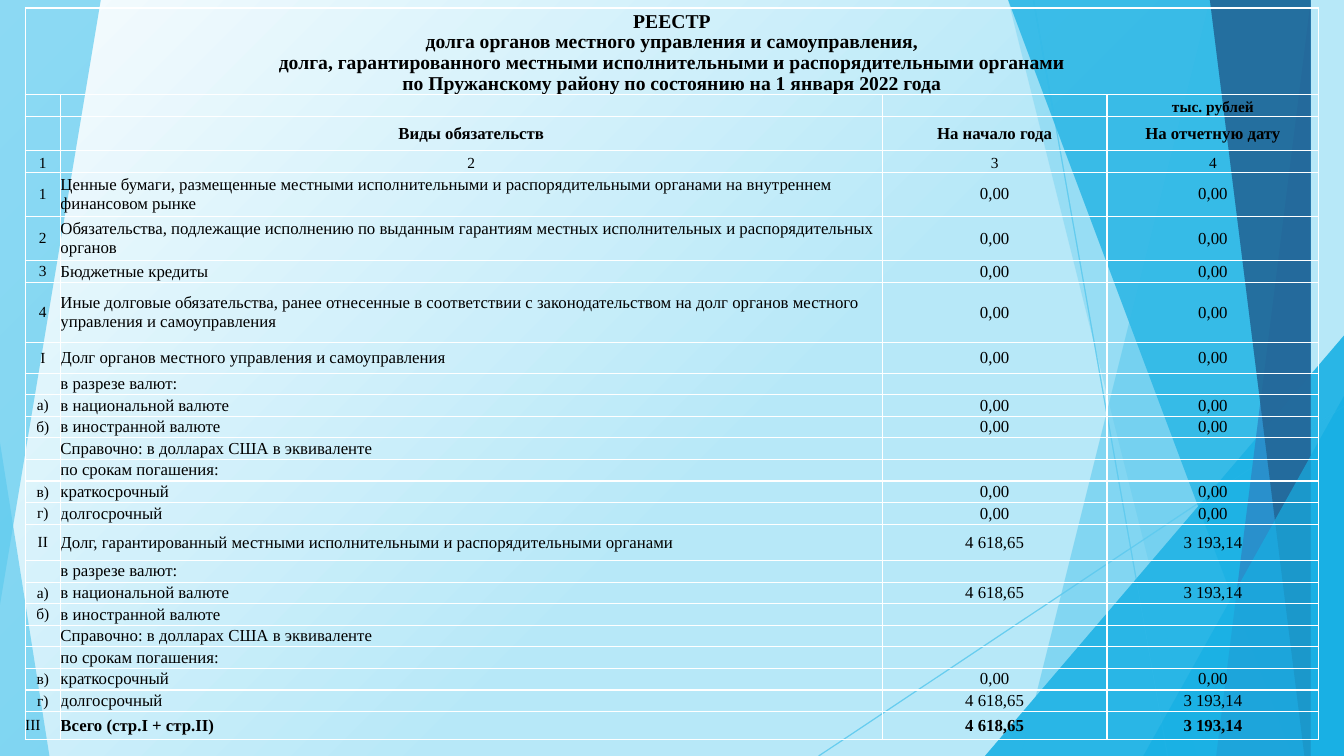
from lxml import etree
from pptx import Presentation, util as u
from pptx.dml.color import RGBColor
from pptx.enum import shapes, text
from pptx.oxml import ns

BLACK = RGBColor(0x00, 0x00, 0x00)
WHITE = RGBColor(0xFF, 0xFF, 0xFF)
MIST = RGBColor(0xF7, 0xFC, 0xFE)
PALE = RGBColor(0xB7, 0xE8, 0xF8)
SKY = RGBColor(0x5F, 0xCB, 0xEF)
AZURE = RGBColor(0x17, 0xB0, 0xE4)
BLUE = RGBColor(0x2E, 0x83, 0xC3)
NAVY = RGBColor(0x22, 0x62, 0x92)

WIDE, HIGH, TOP = 13.33, 7.5, -0.01
LEFT, MID = text.PP_ALIGN.LEFT, text.PP_ALIGN.CENTER
LOW, CENTRE = text.MSO_ANCHOR.BOTTOM, text.MSO_ANCHOR.MIDDLE
FACETS = [
    (12.28, 10.04, SKY, 36),
    (10.5, 11.83, SKY, 20),
    None,
    (10.21, 12.91, AZURE, 50),
    (13.03, 11.92, BLUE, 70),
    (11.96, 13.18, NAVY, 80),
]
TITLE = "\n".join([
    "РЕЕСТР",
    "долга органов местного управления и самоуправления,",
    "долга, гарантированного местными исполнительными и распорядительными органами",
    "по Пружанскому району по состоянию на 1 января 2022 года",
])
ZERO = ("0,00", "0,00")
DEBT = ("4 618,65", "3 193,14")
NONE = ("", "")


def detail(home, abroad, long):
    return [
        ("", "в разрезе валют:", *NONE),
        ("а)", "в национальной валюте", *home),
        ("б)", "в иностранной валюте", *abroad),
        ("", "Справочно: в долларах США в эквиваленте", *NONE),
        ("", "по срокам погашения:", *NONE),
        ("в)", "краткосрочный", *ZERO),
        ("г)", "долгосрочный", *long),
    ]


ROWS = [
    (TITLE, "", "", ""),
    ("", "", "", "тыс. рублей"),
    ("", "Виды обязательств", "На начало года", "На отчетную дату"),
    ("1", "2", "3", "4"),
    ("1", "Ценные бумаги, размещенные местными исполнительными и распорядительными "
     "органами на внутреннем финансовом рынке", *ZERO),
    ("2", "Обязательства, подлежащие исполнению по выданным гарантиям местных "
     "исполнительных и распорядительных органов", *ZERO),
    ("3", "Бюджетные кредиты", *ZERO),
    ("4", "Иные долговые обязательства, ранее отнесенные в соответствии с "
     "законодательством на долг органов местного управления и самоуправления", *ZERO),
    ("I", "Долг органов местного управления и самоуправления", *ZERO),
    *detail(ZERO, ZERO, ZERO),
    ("II", "Долг, гарантированный местными исполнительными и распорядительными органами", *DEBT),
    *detail(DEBT, NONE, DEBT),
    ("III", "Всего (стр.I + стр.II)", *DEBT),
]
LAST = len(ROWS) - 1
COLS = [0.35, 8.15, 2.23, 2.1]
LINE = 1.5 / 7
TALL = {0: 0.86, 2: 0.34, 4: 0.44, 5: 0.44, 7: 0.6, 8: 0.3, 16: 0.36, LAST: 0.28}


def write(frame, words, size=12, bold=False, align=MID, space=None):
    for i, line in enumerate(words.split("\n")):
        para = frame.paragraphs[0] if i == 0 else frame.add_paragraph()
        para.alignment = align
        if space:
            para.line_spacing = space
        if not line:
            para._p.get_or_add_endParaRPr().set("sz", str(size * 100))
            continue
        run = para.add_run()
        run.text = line
        font = run.font
        font.name, font.size, font.bold = "Times New Roman", u.Pt(size), bold
        font.color.rgb = BLACK


def fade(root, alpha):
    tone = next(root.iter(ns.qn("a:srgbClr")))
    etree.SubElement(tone, ns.qn("a:alpha")).set("val", str(alpha * 1000))


class Page:
    def __init__(self, slide):
        self.slide = slide
        self.shapes = slide.shapes

    def ground(self):
        fill = self.slide.background.fill
        fill.gradient()
        fill.gradient_angle = 315
        for stop, tone, place in zip(fill.gradient_stops, (MIST, PALE), (0, 0.57)):
            stop.color.rgb = tone
            stop.position = place

    def paint(self, shape, tone, alpha):
        shape.shadow.inherit = False
        shape.fill.solid()
        shape.fill.fore_color.rgb = tone
        shape.line.fill.background()
        fade(shape._element.spPr, alpha)

    def facet(self, points, tone, alpha):
        form = self.shapes.build_freeform(*points[0], scale=u.Inches(1))
        form.add_line_segments(points[1:], close=True)
        self.paint(form.convert_to_shape(), tone, alpha)

    def wedge(self, x, y, width, tone, alpha, peak):
        shape = self.shapes.add_shape(
            shapes.MSO_SHAPE.ISOSCELES_TRIANGLE,
            *map(u.Inches, (x, y, width, HIGH - y)))
        shape.adjustments[0] = peak
        self.paint(shape, tone, alpha)

    def ray(self, *ends):
        line = self.shapes.add_connector(
            shapes.MSO_CONNECTOR.STRAIGHT, *map(u.Inches, ends))
        line.line.color.rgb = SKY
        line.line.width = u.Pt(0.75)
        props = line._element.spPr
        fade(props, 70)
        etree.SubElement(props, ns.qn("a:effectLst"))

    def edge(self, cell):
        props = cell._tc.get_or_add_tcPr()
        for i, side in enumerate("LRTB"):
            line = etree.Element(ns.qn("a:ln" + side), w=str(u.Pt(1)))
            fill = etree.SubElement(line, ns.qn("a:solidFill"))
            etree.SubElement(fill, ns.qn("a:srgbClr"), val=str(WHITE))
            props.insert(i, line)

    def table(self, x, y):
        high = [TALL.get(i, LINE) for i in range(len(ROWS))]
        grid = self.shapes.add_table(
            len(ROWS), len(COLS),
            *map(u.Inches, (x, y, sum(COLS), sum(high)))).table
        grid.first_row = grid.horz_banding = False
        for col, size in zip(grid.columns, COLS):
            col.width = u.Inches(size)
        for row, size in zip(grid.rows, high):
            row.height = u.Inches(size)
        grid.cell(0, 0).merge(grid.cell(0, 3))
        for r, row in enumerate(ROWS):
            for c, words in enumerate(row):
                cell = grid.cell(r, c)
                cell.fill.background()
                self.edge(cell)
                cell.margin_left = cell.margin_right = 0
                cell.margin_top = cell.margin_bottom = 0
                cell.vertical_anchor = LOW if r in (0, 1, 3) else CENTRE
                small = r in (1, 3) or c == 0
                start = (r > 3 and c == 1) or (r == LAST and c == 0)
                write(cell.text_frame, words,
                      size=14 if r == 0 else 11 if small else 12,
                      bold=r < 3 or (r == LAST and c > 0),
                      align=LEFT if start else MID,
                      space=0.96 if r == 0 else None)


def main():
    deck = Presentation()
    deck.slide_width, deck.slide_height = u.Inches(WIDE), u.Inches(HIGH)
    page = Page(deck.slides.add_slide(deck.slide_layouts[6]))
    page.ground()
    for _ in range(2):
        page.ray(10.25, 0, 11.58, HIGH)
        page.ray(WIDE, 4.03, 8.12, HIGH)
        for facet in FACETS:
            if facet is None:
                page.wedge(9.77, 3.33, 3.56, AZURE, 66, 1)
                continue
            head, foot, tone, alpha = facet
            page.facet([(head, TOP), (WIDE, TOP), (WIDE, HIGH), (foot, HIGH)], tone, alpha)
        page.wedge(11.34, 3.93, 1.99, AZURE, 66, 1)
    page.wedge(0, 4.39, 0.49, SKY, 70, 0)
    page.facet([(0, 0), (0.94, TOP), (0.94, 0.01), (0, 6.22)], SKY, 70)
    page.table(0.25, 0.08)
    deck.save("out.pptx")


if __name__ == "__main__":
    main()
